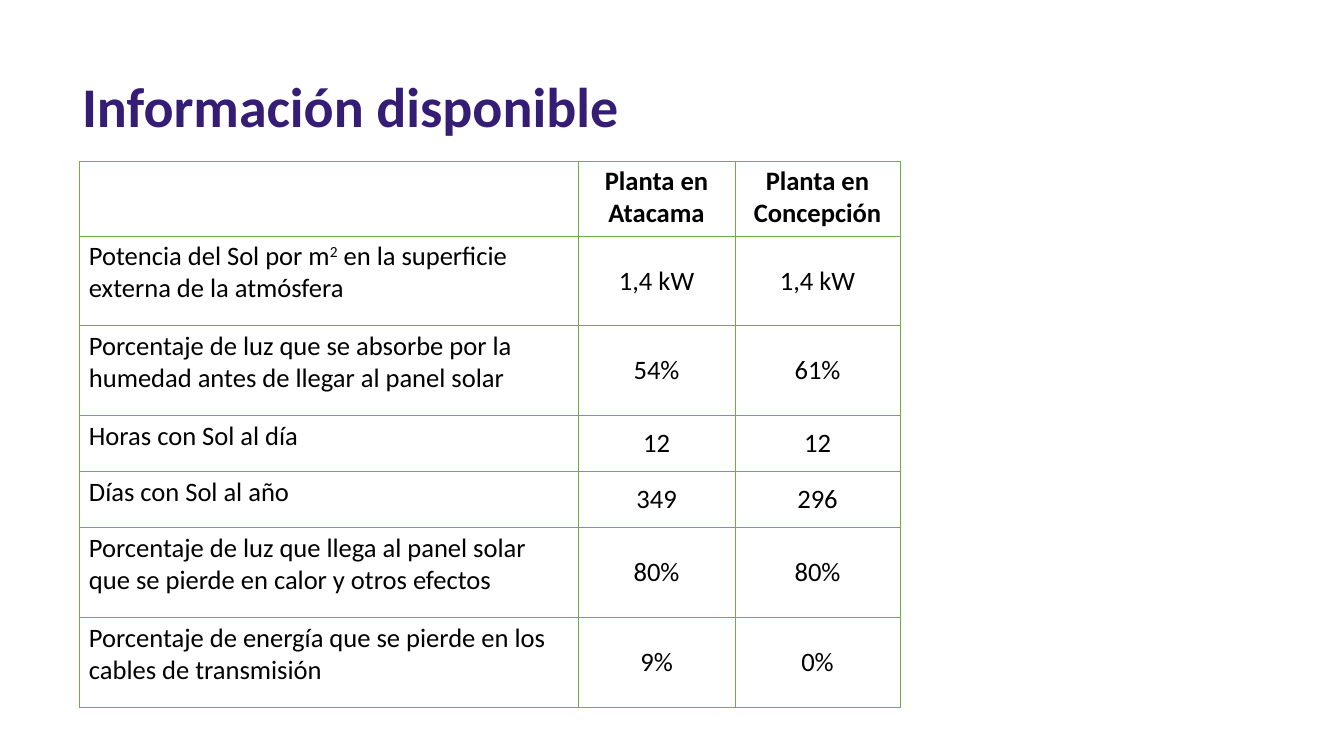
from lxml.etree import SubElement
from pptx import Presentation
from pptx.dml.color import RGBColor
from pptx.enum.text import MSO_ANCHOR, PP_ALIGN
from pptx.oxml.ns import qn
from pptx.util import Emu, Pt

TITLE = "Información disponible"
HEADER = ("", "Planta en Atacama", "Planta en Concepción")
# A label given as a tuple is (text, superscript, text).
ROWS = [
    (("Potencia del Sol por m", "2", " en la superficie externa de la atmósfera"),
     "1,4 kW", "1,4 kW"),
    ("Porcentaje de luz que se absorbe por la humedad antes de llegar al panel solar",
     "54%", "61%"),
    ("Horas con Sol al día", "12", "12"),
    ("Días con Sol al año", "349", "296"),
    ("Porcentaje de luz que llega al panel solar que se pierde en calor y otros efectos",
     "80%", "80%"),
    ("Porcentaje de energía que se pierde en los cables de transmisión", "9%", "0%"),
]

SLIDE_SIZE = (1344, 756)
TITLE_BOX = (72, 66, 866, 78)
TABLE_LEFT, TABLE_TOP = 79, 161
COL_WIDTHS = (499, 157, 165)
ROW_HEIGHTS = (75, 90, 90, 56, 56, 90, 90)

FONT = "Calibri"
PURPLE = RGBColor(0x35, 0x1C, 0x75)
BLACK = RGBColor(0, 0, 0)
GREEN = RGBColor(0x70, 0xAD, 0x47)


def px(n):
    return Emu(round(n * 12192000 / 1344))


def add_run(p, text, size, color, bold=False):
    r = p.add_run()
    r.text = text
    r.font.name = FONT
    r.font.size = Pt(size)
    r.font.bold = bold
    r.font.color.rgb = color
    return r


def set_borders(cell):
    tc_pr = cell._tc.get_or_add_tcPr()
    for side in ("a:lnL", "a:lnR", "a:lnT", "a:lnB"):
        ln = SubElement(tc_pr, qn(side), w=str(Pt(0.75)))
        fill = SubElement(ln, qn("a:solidFill"))
        SubElement(fill, qn("a:srgbClr"), val=str(GREEN))


def fill_cell(cell, content, is_header, is_label):
    set_borders(cell)
    cell.fill.background()
    cell.margin_left = cell.margin_right = px(10)
    cell.margin_top = cell.margin_bottom = px(4)
    if not (is_header or is_label):
        cell.vertical_anchor = MSO_ANCHOR.MIDDLE
    p = cell.text_frame.paragraphs[0]
    p.alignment = PP_ALIGN.LEFT if is_label else PP_ALIGN.CENTER
    parts = content if isinstance(content, tuple) else (content,)
    for i, text in enumerate(parts):
        if text:
            r = add_run(p, text, 19, BLACK, is_header)
            if i == 1:
                r.font._element.set("baseline", "30000")


def add_title(s):
    sp = s.shapes.title
    sp.left, sp.top, sp.width, sp.height = map(px, TITLE_BOX)
    tf = sp.text_frame
    tf.word_wrap = True
    tf.vertical_anchor = MSO_ANCHOR.TOP
    p = tf.paragraphs[0]
    p.alignment = PP_ALIGN.LEFT
    add_run(p, TITLE, 40, PURPLE, True)


def add_plant_table(s):
    rows = [HEADER] + ROWS
    table = s.shapes.add_table(
        len(rows), len(HEADER), px(TABLE_LEFT), px(TABLE_TOP),
        px(sum(COL_WIDTHS)), px(sum(ROW_HEIGHTS))).table
    table.first_row = table.horz_banding = False
    for col, width in zip(table.columns, COL_WIDTHS):
        col.width = px(width)
    for i, (row, height) in enumerate(zip(table.rows, ROW_HEIGHTS)):
        row.height = px(height)
        for j, content in enumerate(rows[i]):
            fill_cell(table.cell(i, j), content, i == 0, j == 0)


def main():
    prs = Presentation()
    prs.slide_width, prs.slide_height = map(px, SLIDE_SIZE)
    s = prs.slides.add_slide(prs.slide_layouts[5])
    add_title(s)
    add_plant_table(s)
    prs.save("out.pptx")


if __name__ == "__main__":
    main()
